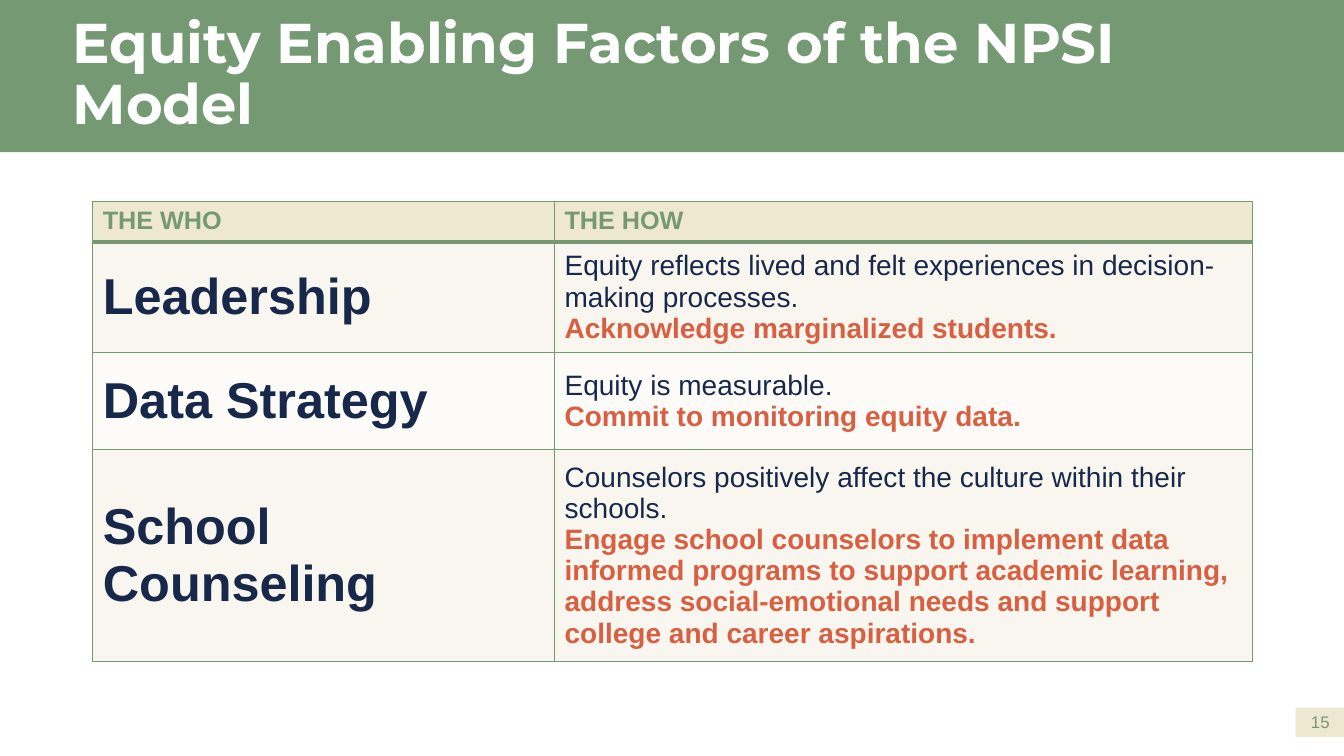
from lxml import etree
from pptx import Presentation
from pptx import util as u
from pptx.dml.color import RGBColor
from pptx.enum import shapes, text
from pptx.oxml.ns import qn

HUES = {
    "green": "759A73",
    "sand": "EEE8D0",
    "cream": "F8F6EE",
    "pale": "FCFBF7",
    "navy": "17284B",
    "coral": "D85F41",
    "white": "FFFFFF",
}

ROWS = [
    ("Leadership", 1.1,
     "Equity reflects lived and felt experiences in decision-making processes.",
     "Acknowledge marginalized students."),
    ("Data Strategy", 0.96,
     "Equity is measurable.",
     "Commit to monitoring equity data."),
    ("School Counseling", 2.1,
     "Counselors positively affect the culture within their schools.",
     "Engage school counselors to implement data informed programs to support "
     "academic learning, address social-emotional needs and support college "
     "and career aspirations."),
]


class Deck:
    def __init__(self):
        self.show = Presentation()
        self.show.slide_width = u.Inches(13.33)
        self.show.slide_height = u.Inches(7.5)
        self.slide = self.show.slides.add_slide(self.show.slide_layouts[5])

    def hue(self, name):
        return RGBColor.from_string(HUES[name])

    def label(self, para, words, size, hue, bold=False, face="Arial"):
        para.text = words
        font = para.font
        font.size = u.Pt(size)
        font.name = face
        font.bold = bold
        font.color.rgb = self.hue(hue)

    def rect(self, x, y, w, h, hue):
        box = self.slide.shapes.add_shape(
            shapes.MSO_SHAPE.RECTANGLE, *map(u.Inches, (x, y, w, h)))
        box.shadow.inherit = False
        box.fill.solid()
        box.fill.fore_color.rgb = self.hue(hue)
        box.line.fill.background()
        return box

    def title(self, words):
        band = self.rect(0, 0, 13.33, 1.51, "green")
        head = self.slide.shapes.title
        head._element.addprevious(band._element)
        head.left, head.top, head.width, head.height = map(
            u.Inches, (0.42, 0, 11.35, 1.51))
        frame = head.text_frame
        frame.word_wrap = True
        frame.auto_size = text.MSO_AUTO_SIZE.NONE
        frame.vertical_anchor = text.MSO_ANCHOR.MIDDLE
        frame.margin_left = u.Inches(0.3)
        para = frame.paragraphs[0]
        self.label(para, words, 40, "white", True, "Montserrat")
        para.alignment = text.PP_ALIGN.LEFT
        para.line_spacing = 0.9

    def edge(self, cell, top, foot):
        props = cell._tc.get_or_add_tcPr()
        for spot, (side, wide) in enumerate(
                (("lnL", 1), ("lnR", 1), ("lnT", top), ("lnB", foot))):
            line = etree.Element(qn("a:" + side), w=str(u.Pt(wide)))
            fill = etree.SubElement(line, qn("a:solidFill"))
            etree.SubElement(fill, qn("a:srgbClr"), val=HUES["green"])
            props.insert(spot, line)

    def cell(self, cell, lines, hue, top=1, foot=1):
        cell.fill.solid()
        cell.fill.fore_color.rgb = self.hue(hue)
        self.edge(cell, top, foot)
        frame = cell.text_frame
        for spot, line in enumerate(lines):
            para = frame.add_paragraph() if spot else frame.paragraphs[0]
            self.label(para, *line)

    def table(self, heads, rows):
        grid = self.slide.shapes.add_table(
            len(rows) + 1, 2, *map(u.Inches, (0.92, 2, 11.5, 4.56))).table
        for col, wide in zip(grid.columns, (4.58, 6.92)):
            col.width = u.Inches(wide)
        grid.rows[0].height = u.Inches(0.4)
        for col, head in enumerate(heads):
            self.cell(grid.cell(0, col), [(head, 18, "green", True)],
                      "sand", foot=3)
        for row, (who, high, how, act) in enumerate(rows, 1):
            grid.rows[row].height = u.Inches(high)
            hue = "cream" if row % 2 else "pale"
            top = 3 if row == 1 else 1
            sides = ([(who, 36, "navy", True)],
                     [(how, 20, "navy"), (act, 20, "coral", True)])
            for col, lines in enumerate(sides):
                part = grid.cell(row, col)
                self.cell(part, lines, hue, top)
                part.vertical_anchor = text.MSO_ANCHOR.MIDDLE

    def number(self, words):
        box = self.rect(12.85, 7.02, 0.49, 0.29, "sand")
        frame = box.text_frame
        frame.vertical_anchor = text.MSO_ANCHOR.MIDDLE
        para = frame.paragraphs[0]
        self.label(para, words, 12, "green")
        para.alignment = text.PP_ALIGN.CENTER


def main():
    deck = Deck()
    deck.title("Equity Enabling Factors of the NPSI Model")
    deck.table(("THE WHO", "THE HOW"), ROWS)
    deck.number("15")
    deck.show.save("out.pptx")


if __name__ == "__main__":
    main()
